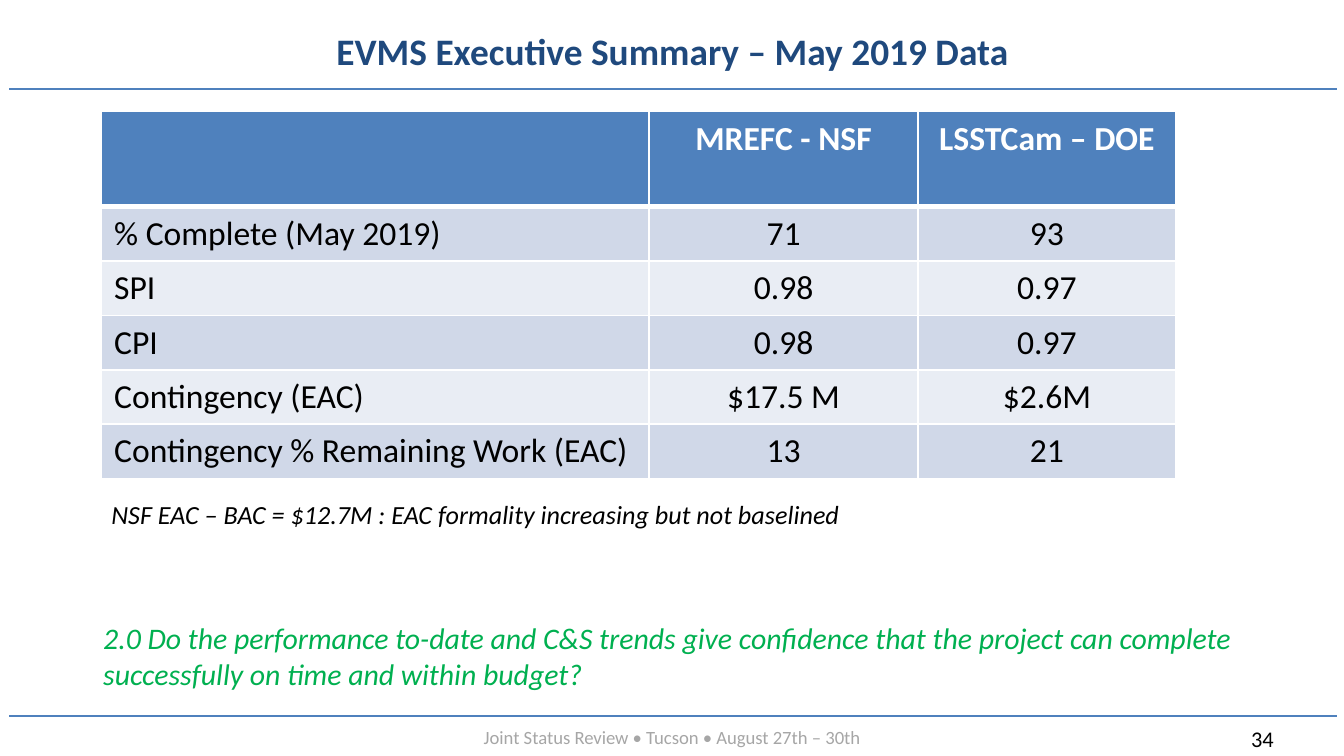
from lxml import etree
from pptx import Presentation
from pptx import util as u
from pptx.dml.color import RGBColor
from pptx.enum import shapes, text
from pptx.oxml.ns import qn

FONT = "Calibri"
BLUE = RGBColor(0x4F, 0x81, 0xBD)
NAVY = RGBColor(0x1F, 0x49, 0x7D)
GREEN = RGBColor(0x00, 0xB0, 0x50)
GRAY = RGBColor(0xA6, 0xA6, 0xA6)
BLACK = RGBColor(0x00, 0x00, 0x00)
WHITE = RGBColor(0xFF, 0xFF, 0xFF)
BAND_DARK = RGBColor(0xD0, 0xD8, 0xE8)
BAND_LIGHT = RGBColor(0xE9, 0xED, 0xF4)
LEFT, CENTER = text.PP_ALIGN.LEFT, text.PP_ALIGN.CENTER

METRICS = [
    ("", "MREFC - NSF", "LSSTCam – DOE"),
    ("% Complete (May 2019)", "71", "93"),
    ("SPI", "0.98", "0.97"),
    ("CPI", "0.98", "0.97"),
    ("Contingency (EAC)", "$17.5 M", "$2.6M"),
    ("Contingency % Remaining Work (EAC)", "13", "21"),
]


def write(frame, wording, size, color, align=LEFT, bold=False, italic=False):
    """Put one styled run in the first paragraph of a frame."""
    para = frame.paragraphs[0]
    para.alignment = align
    span = para.add_run()
    span.text = wording
    span.font.name = FONT
    span.font.size = u.Pt(size)
    span.font.color.rgb = color
    span.font.bold = bold
    span.font.italic = italic


def add_label(page, box, wording, size, color, anchor=text.MSO_ANCHOR.TOP, **style):
    """Add a wrapping text box with one line of styled wording."""
    label = page.shapes.add_textbox(*map(u.Inches, box))
    label.text_frame.word_wrap = True
    label.text_frame.vertical_anchor = anchor
    write(label.text_frame, wording, size, color, **style)


def add_rule(page, left, top, width):
    """Draw a thin horizontal blue rule."""
    ends = map(u.Inches, (left, top, left + width, top))
    rule = page.shapes.add_connector(shapes.MSO_CONNECTOR.STRAIGHT, *ends)
    rule.line.color.rgb = BLUE
    rule.line.width = u.Pt(1)
    etree.SubElement(rule._element.spPr, qn("a:effectLst"))


def set_borders(cell, bottom_width):
    """Give a cell white borders, with its own bottom width in points."""
    properties = cell._tc.get_or_add_tcPr()
    widths = {"lnL": 1, "lnR": 1, "lnT": 1, "lnB": bottom_width}
    for position, (side, width) in enumerate(widths.items()):
        border = etree.Element(qn(f"a:{side}"), w=str(u.Pt(width)))
        fill = etree.SubElement(border, qn("a:solidFill"))
        etree.SubElement(fill, qn("a:srgbClr"), val=str(WHITE))
        properties.insert(position, border)


def add_header(page, left, top, width):
    """Place the slide title above its rule."""
    add_label(page, (left + 1.85, top, 6.17, 0.46),
              "EVMS Executive Summary – May 2019 Data", 20, NAVY,
              anchor=text.MSO_ANCHOR.MIDDLE, align=CENTER, bold=True)
    add_rule(page, left, top + 0.51, width)


def add_metrics(page, left, top, width, height):
    """Place the metrics table with a tall header and banded rows."""
    box = map(u.Inches, (left, top, width, height))
    table = page.shapes.add_table(len(METRICS), 3, *box).table
    for column, share in zip(table.columns, (0.51, 0.25, 0.24)):
        column.width = u.Inches(width * share)
    header_height = 0.71
    row_height = (height - header_height) / (len(METRICS) - 1)
    for r, values in enumerate(METRICS):
        header = r == 0
        table.rows[r].height = u.Inches(header_height if header else row_height)
        band = BLUE if header else BAND_DARK if r % 2 else BAND_LIGHT
        for c, value in enumerate(values):
            cell = table.cell(r, c)
            cell.fill.solid()
            cell.fill.fore_color.rgb = band
            set_borders(cell, 3 if header else 1)
            if value:
                write(cell.text_frame, value, 18, WHITE if header else BLACK,
                      align=CENTER if c else LEFT, bold=header)


def add_remarks(page, left, top):
    """Place the budget note and the review question."""
    add_label(page, (left, top, 6.42, 0.34),
              "NSF EAC – BAC = $12.7M : EAC formality increasing but not baselined",
              14, BLACK, align=CENTER, italic=True)
    add_label(page, (left + 0.34, top + 0.9, 8.67, 0.45),
              "2.0 Do the performance to-date and C&S trends give confidence that "
              "the project can complete successfully on time and within budget?",
              16, GREEN, italic=True)


def add_footer(page, left, top, width):
    """Place the footer rule, event line and page number."""
    add_rule(page, left, top, width)
    add_label(page, (left + 0.43, top + 0.02, 9, 0.27),
              "Joint Status Review • Tucson • August 27th – 30th", 10, GRAY, align=CENTER)
    add_label(page, (left + 9.14, top + 0.02, 0.62, 0.3), "34", 12, BLACK)


def main():
    """Build and save the summary slide."""
    deck = Presentation()
    deck.slide_width = u.Inches(10)
    deck.slide_height = deck.slide_width * 9 // 16
    page = deck.slides.add_slide(deck.slide_layouts[6])
    add_header(page, 0.07, 0.15, 9.88)
    add_metrics(page, 0.75, 0.83, 8, 2.73)
    add_remarks(page, 0.33, 3.66)
    add_footer(page, 0.07, 5.33, 9.88)
    deck.save("out.pptx")


if __name__ == "__main__":
    main()
